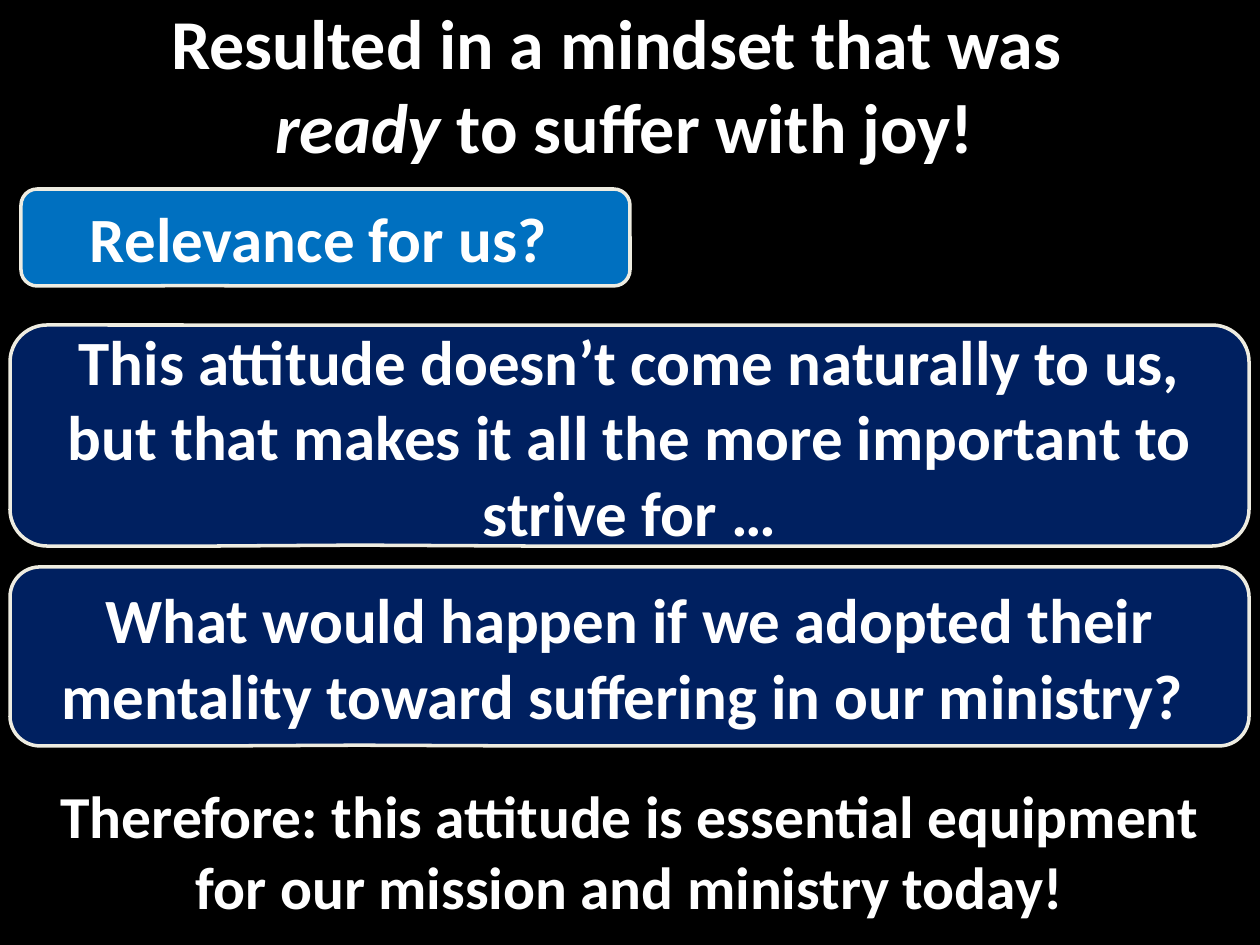
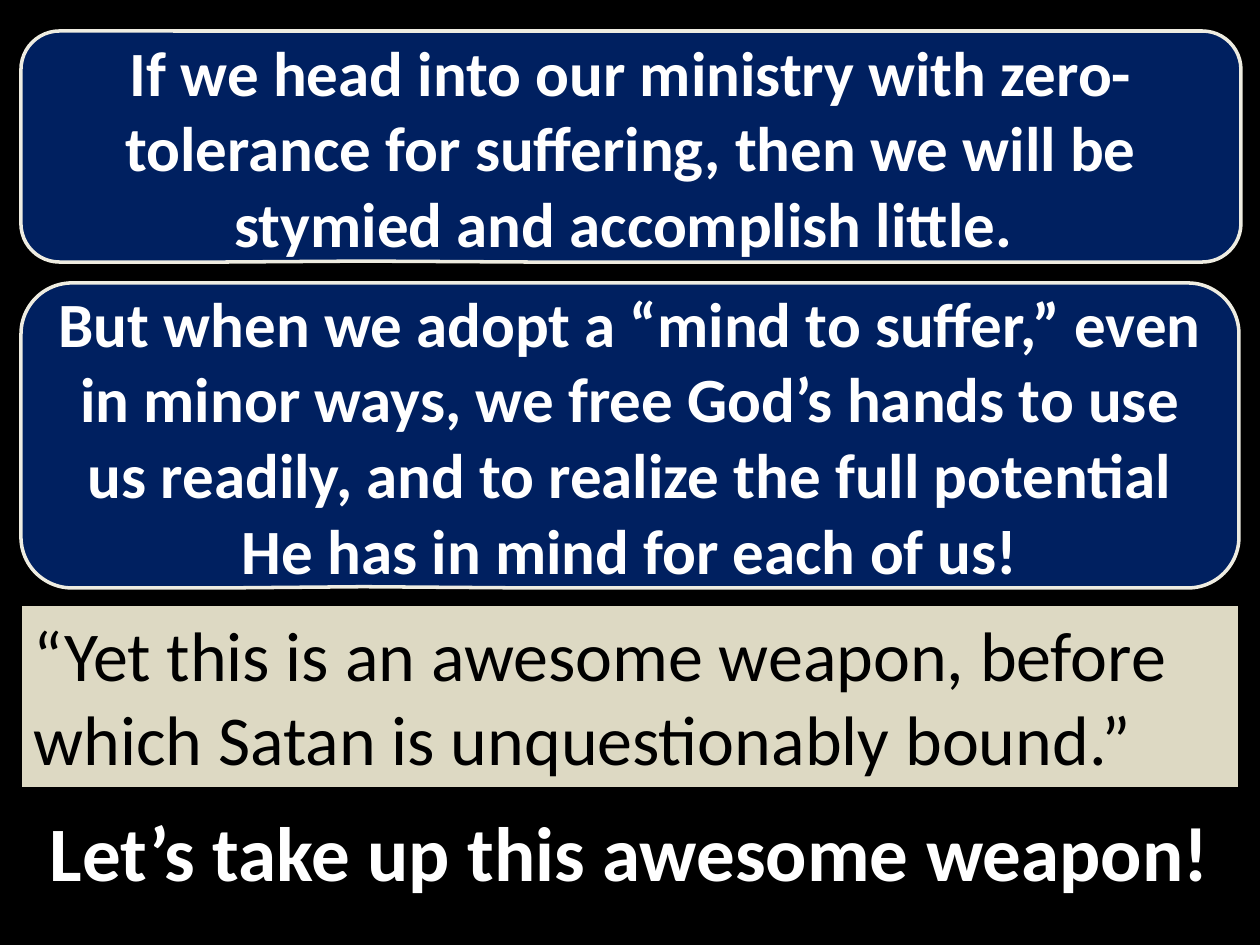
"""Two slides on a mindset that is ready to suffer."""
from pptx import Presentation, util as u
from pptx.dml.color import RGBColor
from pptx.enum import shapes, text

PX = 914400 / 126
FONT = "Calibri"
BLACK, WHITE, CREAM, SAND = "000000", "FFFFFF", "EEECE1", "DDD9C3"
BLUE, NAVY = "0070C0", "002060"


def paint(target, color):
    target.solid()
    target.fore_color.rgb = RGBColor.from_string(color)


def write(shape, place, words, size, color=WHITE, bold=True):
    shape.left, shape.top, shape.width, shape.height = [round(n * PX) for n in place]
    frame = shape.text_frame
    frame.text = words
    frame.word_wrap = True
    frame.auto_size = text.MSO_AUTO_SIZE.NONE
    frame.vertical_anchor = text.MSO_ANCHOR.MIDDLE
    for para in frame.paragraphs:
        para.alignment = text.PP_ALIGN.CENTER
        for span in para.runs:
            span.font.name, span.font.size, span.font.bold = FONT, u.Pt(size), bold
            paint(span.font.fill, color)


deck = Presentation()
deck.slide_width, deck.slide_height = round(1260 * PX), round(945 * PX)

contents = [
    (
        ((-32, 0, 1313, 168), "Resulted in a mindset that was \nready to suffer with joy!", 40),
        [
            ((21, 189, 609, 97), "Relevance for us? ", 36, BLUE),
            ((10, 777, 1239, 147), "Therefore: this attitude is essential equipment "
             "for our mission and ministry today!", 34, None),
            ((10, 325, 1239, 221), "This attitude doesn’t come naturally to us, but that "
             "makes it all the more important to strive for …", 36, NAVY),
            ((10, 567, 1239, 179), "What would happen if we adopted their mentality "
             "toward suffering in our ministry? ", 36, NAVY),
        ],
    ),
    (
        ((0, 756, 1260, 189), "Let’s take up this awesome weapon!", 44),
        [
            ((21, 31, 1220, 231), "If we head into our ministry with zero-tolerance for "
             "suffering, then we will be stymied and accomplish little. ", 36, NAVY),
            ((21, 283, 1218, 305), "But when we adopt a “mind to suffer,” even in minor "
             "ways, we free God’s hands to use us readily, and to realize the full "
             "potential He has in mind for each of us!", 36, NAVY),
        ],
    ),
]

for title, callouts in contents:
    page = deck.slides.add_slide(deck.slide_layouts[5])
    paint(page.background.fill, BLACK)
    write(page.shapes.title, *title)
    for place, words, size, fill in callouts:
        box = page.shapes.add_shape(shapes.MSO_SHAPE.ROUNDED_RECTANGULAR_CALLOUT, 0, 0, 0, 0)
        box.shadow.inherit = False
        for index, value in enumerate((-0.219, 0.496, 0.167)):
            box.adjustments[index] = value
        write(box, place, words, size)
        if fill:
            paint(box.fill, fill)
            paint(box.line.fill, CREAM)
            box.line.width = u.Pt(2)
        else:
            box.fill.background()
            box.line.fill.background()

opening, closing = deck.slides
para = opening.shapes.title.text_frame.paragraphs[1]
emphasis = para.runs[0]
emphasis.text = "ready"
emphasis.font.italic = True
span = para.add_run()
span.text = " to suffer with joy!"
span.font.name, span.font.size, span.font.bold = FONT, u.Pt(40), True
paint(span.font.fill, WHITE)

quote = closing.shapes.add_shape(shapes.MSO_SHAPE.RECTANGLE, 0, 0, 0, 0)
quote.shadow.inherit = False
paint(quote.fill, SAND)
paint(quote.line.fill, BLACK)
quote.line.width = u.Pt(0.75)
write(quote, (21, 605, 1218, 183), "“Yet this is an awesome weapon, before which Satan "
      "is unquestionably bound.”", 40, BLACK, False)
quote.text_frame.vertical_anchor = text.MSO_ANCHOR.TOP
quote.text_frame.paragraphs[0].alignment = text.PP_ALIGN.LEFT

deck.save("out.pptx")
